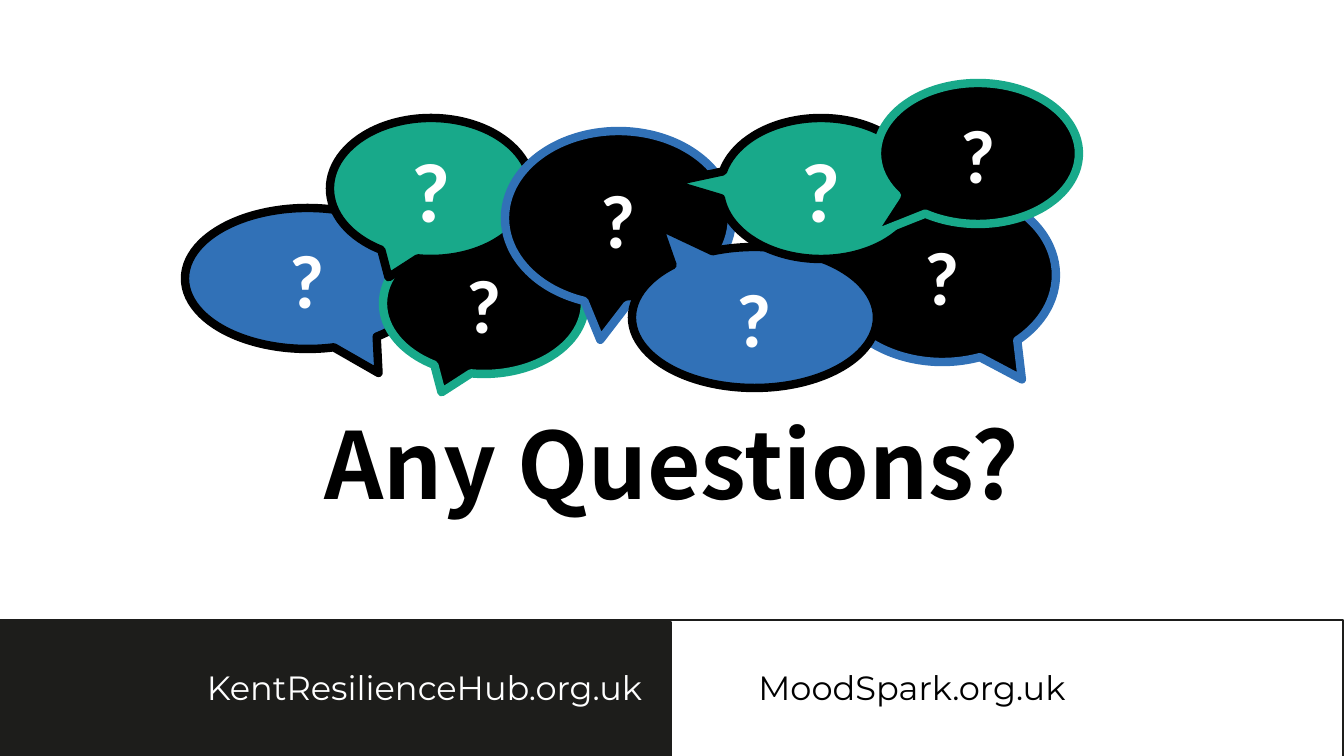
from pptx import Presentation, util as u
from pptx.dml.color import RGBColor
from pptx.enum import shapes, text

COLORS = {"black": "000000", "white": "FFFFFF", "blue": "3171B7",
          "green": "18A98A", "charcoal": "1D1D1B"}
EMU_PER_PX = 914400 / 100.8


def px(*lengths):
    return [u.Emu(round(n * EMU_PER_PX)) for n in lengths]


def write(frame, words, font, size, color, bold=False):
    paragraph = frame.paragraphs[0]
    paragraph.alignment = text.PP_ALIGN.CENTER
    run = paragraph.add_run()
    run.text = words
    run.font.name, run.font.size, run.font.bold = font, u.Pt(size), bold
    run.font.color.rgb = RGBColor.from_string(COLORS[color])
    return paragraph


deck = Presentation()
deck.slide_width, deck.slide_height = px(1344, 756)
slide = deck.slides.add_slide(deck.slide_layouts[0])
subtitle = slide.placeholders[1]
subtitle.element.getparent().remove(subtitle.element)

# Title
title = slide.shapes.title
title.left, title.top, title.width, title.height = px(295, 417, 754, 105)
title.text_frame.auto_size = text.MSO_AUTO_SIZE.NONE
title.text_frame.vertical_anchor = text.MSO_ANCHOR.MIDDLE
heading = write(title.text_frame, "Any Questions?", "Noto Sans CJK KR", 66, "black", True)
heading.line_spacing = 0.9

# Footer bands, white one first
for top, width, height, fill in [(620, 1344, 137, "white"), (622, 672, 135, "charcoal")]:
    band = slide.shapes.add_shape(shapes.MSO_SHAPE.RECTANGLE, *px(-1, top, width, height))
    band.shadow.inherit = False
    band.fill.solid()
    band.fill.fore_color.rgb = RGBColor.from_string(COLORS[fill])
    band.line.color.rgb = RGBColor.from_string(COLORS["charcoal"])
    band.line.width = u.Pt(1)

# Website addresses
for left, width, address, color in [(185, 479, "KentResilienceHub.org.uk", "white"),
                                    (685, 454, "MoodSpark.org.uk", "black")]:
    website = slide.shapes.add_textbox(*px(left, 662, width, 50))
    website.text_frame.word_wrap = True
    write(website.text_frame, address, "Montserrat", 24, color)

# Speech bubbles, back to front: place, tail tip, fill, outline, text size
SMALL, WIDE, LARGE = (202, 141), (245, 141), (227, 174)
DEFAULT_TAIL = (-0.21, 0.63)
bubbles = [
    (185, 208, WIDE, (0.29, 0.67), "blue", "black", 54),
    (383, 233, SMALL, DEFAULT_TAIL, "black", "green", 54),
    (829, 188, LARGE, (0.35, 0.6), "black", "blue", 54),
    (330, 118, SMALL, DEFAULT_TAIL, "green", "black", 60),
    (505, 131, LARGE, (-0.08, 0.7), "black", "blue", 54),
    (632, 247, WIDE, (-0.39, -0.65), "blue", "black", 54),
    (720, 118, SMALL, (-0.75, -0.04), "green", "black", 60),
    (877, 83, SMALL, (-0.53, 0.58), "black", "green", 54),
]
for left, top, size, tail, fill, outline, points in bubbles:
    bubble = slide.shapes.add_shape(shapes.MSO_SHAPE.OVAL_CALLOUT, *px(left, top, *size))
    bubble.adjustments[0], bubble.adjustments[1] = tail
    bubble.shadow.inherit = False
    bubble.fill.solid()
    bubble.fill.fore_color.rgb = RGBColor.from_string(COLORS[fill])
    bubble.line.color.rgb = RGBColor.from_string(COLORS[outline])
    bubble.line.width = u.Pt(6)
    bubble.text_frame.vertical_anchor = text.MSO_ANCHOR.MIDDLE
    write(bubble.text_frame, "?", "Calibri", points, "white", True)

deck.save("out.pptx")
